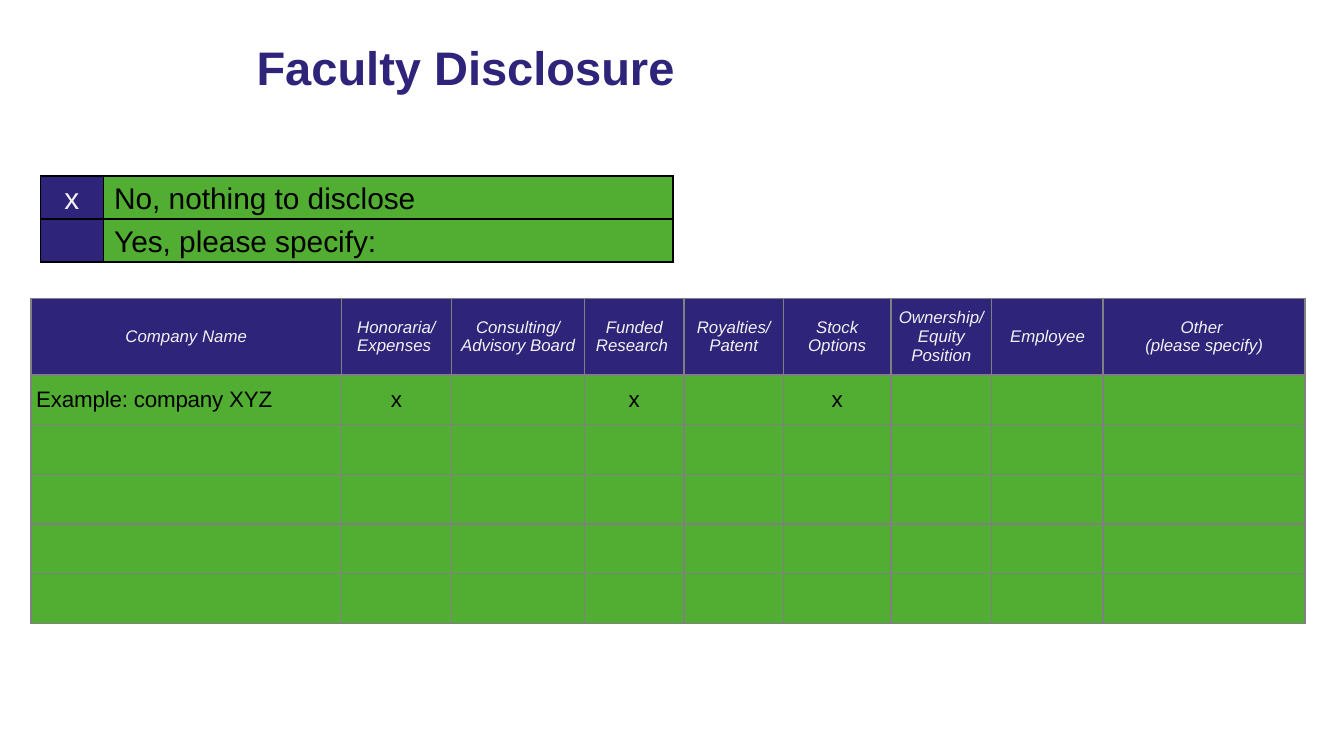
from lxml import etree
from pptx import Presentation
from pptx import util as u
from pptx.dml.color import RGBColor
from pptx.enum import text
from pptx.oxml.ns import qn

COLORS = {"navy": "2E247A", "green": "52AE32", "light": "F2F2F2",
          "dark": "000000", "grid": "808080"}
FONT = "Arial"
SLIDE_W = 10
SLIDE_H = SLIDE_W * 9 / 16

TITLE = "Faculty Disclosure"
ANSWERS = [("x", "No, nothing to disclose"), ("", "Yes, please specify:")]
ANSWER_COLS = [0.47, 4.24]
INTERESTS = [
    ("Company Name", 2.31), ("Honoraria/\nExpenses ", 0.82),
    ("Consulting/ Advisory Board", 0.99), ("Funded Research ", 0.74),
    ("Royalties/ Patent", 0.74), ("Stock Options", 0.8),
    ("Ownership/ Equity Position", 0.75), ("Employee", 0.83),
    ("Other \n(please specify)", 1.5),
]
EXAMPLE = ["Example: company XYZ", "x", "", "x", "", "x", "", "", ""]
EMPTY_ROWS = 4

CENTER, LEFT = text.PP_ALIGN.CENTER, text.PP_ALIGN.LEFT
MIDDLE, TOP = text.MSO_ANCHOR.MIDDLE, text.MSO_ANCHOR.TOP


def write(frame, content, size, color, align, bold=False, italic=False,
          spacing=None, tracking=0):
    for i, line in enumerate(content.split("\n")):
        paragraph = frame.paragraphs[0] if i == 0 else frame.add_paragraph()
        paragraph.alignment = align
        if spacing:
            paragraph.line_spacing = spacing
        if not line:
            paragraph.font.size = u.Pt(size)
            continue
        run = paragraph.add_run()
        run.text = line
        font = run.font
        font.name, font.size, font.bold, font.italic = FONT, u.Pt(size), bold, italic
        font.color.rgb = RGBColor.from_string(COLORS[color])
        if tracking:
            run._r.get_or_add_rPr().set("spc", str(round(tracking * 100)))


def add_grid(slide, left, top, widths, heights, border, margins):
    grid = slide.shapes.add_table(
        len(heights), len(widths), u.Inches(left), u.Inches(top),
        u.Inches(sum(widths)), u.Inches(sum(heights))).table
    grid.first_row = grid.horz_banding = False
    for column, width in zip(grid.columns, widths):
        column.width = u.Inches(width)
    for row, height in zip(grid.rows, heights):
        row.height = u.Inches(height)
    side, upper = margins
    for cell in grid.iter_cells():
        cell.margin_left = cell.margin_right = u.Inches(side)
        cell.margin_top, cell.margin_bottom = u.Inches(upper), 0
        properties = cell._tc.get_or_add_tcPr()
        for edge in ("lnL", "lnR", "lnT", "lnB"):
            line = etree.SubElement(properties, qn(f"a:{edge}"), w=str(u.Pt(1)))
            fill = etree.SubElement(line, qn("a:solidFill"))
            etree.SubElement(fill, qn("a:srgbClr"), val=COLORS[border])
    return grid


def fill_cell(cell, content, fill, anchor, **style):
    cell.fill.solid()
    cell.fill.fore_color.rgb = RGBColor.from_string(COLORS[fill])
    cell.vertical_anchor = anchor
    write(cell.text_frame, content, **style)


def add_title(slide):
    frame = slide.shapes.add_textbox(
        u.Inches(0.23), u.Inches(0.18), u.Inches(6.47), u.Inches(0.63)).text_frame
    frame.word_wrap = True
    frame.vertical_anchor = MIDDLE
    frame.margin_top = frame.margin_bottom = u.Inches(0.1)
    write(frame, TITLE, 25.2, "navy", CENTER, bold=True)


def add_interests(slide):
    headings, widths = zip(*INTERESTS)
    rows = [headings, EXAMPLE] + [[""] * len(headings)] * EMPTY_ROWS
    heights = [0.57] + [0.37] * (len(rows) - 1)
    grid = add_grid(slide, 0.23, 2.22, widths, heights, "grid", (0.04, 0))
    for r, row in enumerate(rows):
        for c, content in enumerate(row):
            head = r == 0
            label = not head and c == 0
            fill_cell(grid.cell(r, c), content, "navy" if head else "green", MIDDLE,
                      size=9 if head else 12, color="light" if head else "dark",
                      align=LEFT if label else CENTER, italic=head,
                      tracking=-0.1 if label else 0)


def add_answers(slide):
    grid = add_grid(slide, 0.3, 1.31, ANSWER_COLS, [0.32] * len(ANSWERS),
                    "dark", (0.08, 0.01))
    for r, (mark, answer) in enumerate(ANSWERS):
        fill_cell(grid.cell(r, 0), mark, "navy", TOP, size=16, color="light",
                  align=CENTER, spacing=1.15)
        fill_cell(grid.cell(r, 1), answer, "green", TOP, size=16, color="dark",
                  align=LEFT, spacing=1.15)


def main():
    deck = Presentation()
    deck.slide_width, deck.slide_height = u.Inches(SLIDE_W), u.Inches(SLIDE_H)
    slide = deck.slides.add_slide(deck.slide_layouts[6])
    add_title(slide)
    add_interests(slide)
    add_answers(slide)
    deck.save("out.pptx")


if __name__ == "__main__":
    main()
